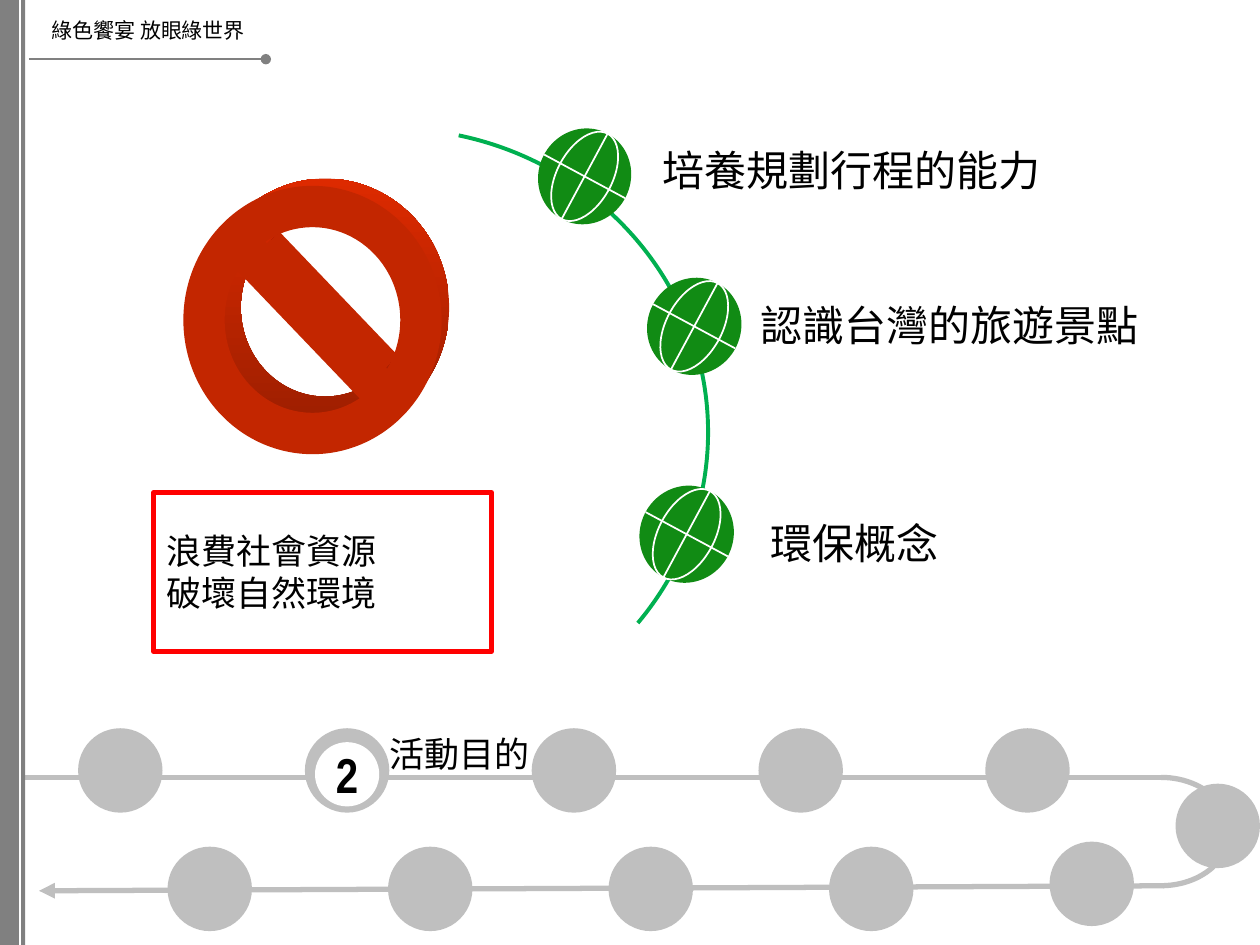
from math import cos, radians, sin

from lxml.etree import SubElement
from pptx import Presentation
from pptx.dml.color import RGBColor
from pptx.enum.shapes import MSO_CONNECTOR, MSO_SHAPE as SHAPE
from pptx.enum.text import MSO_ANCHOR as ANCHOR, PP_ALIGN as ALIGN
from pptx.oxml.ns import qn
from pptx.util import Inches, Pt

WIDTH, HEIGHT = 10, 7.5
CJK_FONT = "Noto Sans CJK SC"
COLORS = {
    "black": "000000", "white": "FFFFFF", "gray": "808080", "track": "BFBFBF",
    "globe": "118B14", "arc": "00B050", "red": "FF0000",
    "sign": "C32600", "sign_dark": "9A1E00", "sign_bright": "DD2A00",
}

HEADER = "綠色饗宴 放眼綠世界"
WARNINGS = ["浪費社會資源", "破壞自然環境"]
STEP_NUMBER, STEP_TITLE = "2", "活動目的"
# text, globe center, globe size, label box
GOALS = [
    ("培養規劃行程的能力", (4.64, 1.4), (0.73, 0.77), (5.16, 1.1, 3.62, 0.5)),
    ("環保概念", (5.45, 4.24), (0.74, 0.78), (6.02, 4.06, 2.92, 0.5)),
    ("認識台灣的旅遊景點", (5.51, 2.59), (0.74, 0.78), (5.94, 2.33, 3.39, 0.5)),
]
GLOBE_TILT = 28.3

# Stops of the winding track at the foot of the slide
STOP_SIZE = 0.67
STOPS_PER_ROW = 5
UPPER_LEFT, UPPER_STEP, UPPER_TOP = 0.62, 1.8, 5.78
LOWER_LEFT, LOWER_STEP, LOWER_TOP = 1.33, 1.75, 6.72
LAST_LOWER_TOP = 6.68
TURN_STOP = (WIDTH - STOP_SIZE, 6.22)

SIGN_CENTER, SIGN_SIZE, SIGN_RING = (2.48, 2.54), (2.05, 2.13), 0.16
SIGN_SHIFT, SIGN_BACK_SCALE = 0.1, 0.96


def color(name):
    return RGBColor.from_string(COLORS[name])


def around(center, size):
    return (center[0] - size[0] / 2, center[1] - size[1] / 2, *size)


def add_shape(shapes, kind, box, fill=None, line=None, weight=1, rotation=0, adjust=()):
    shape = shapes.add_shape(kind, *(Inches(length) for length in box))
    shape.shadow.inherit = False
    shape.rotation = rotation
    for index, value in enumerate(adjust):
        shape.adjustments[index] = value
    if fill:
        shape.fill.solid()
        shape.fill.fore_color.rgb = color(fill)
    else:
        shape.fill.background()
    if line:
        shape.line.color.rgb = color(line)
        shape.line.width = Pt(weight)
    else:
        shape.line.fill.background()
    return shape


def add_line(shapes, start, end, line, weight=1, head=None, tail=None):
    connector = shapes.add_connector(
        MSO_CONNECTOR.STRAIGHT, *(Inches(length) for length in (*start, *end)))
    connector.line.color.rgb = color(line)
    connector.line.width = Pt(weight)
    properties = connector.element.spPr
    outline = properties.find(qn("a:ln"))
    for tag, kind in (("a:headEnd", head), ("a:tailEnd", tail)):
        if kind:
            SubElement(outline, qn(tag), type=kind)
    SubElement(properties, qn("a:effectLst"))


def write(shape, *lines, size, font="Arial", bold=False, align=ALIGN.LEFT,
          anchor=ANCHOR.MIDDLE, wrap=True):
    frame = shape.text_frame
    frame.word_wrap = wrap
    frame.vertical_anchor = anchor
    for index, text in enumerate(lines):
        paragraph = frame.add_paragraph() if index else frame.paragraphs[0]
        paragraph.alignment = align
        run = paragraph.add_run()
        run.text = text
        run.font.name, run.font.size, run.font.bold = font, Pt(size), bold
        run.font.color.rgb = color("black")
        if font == CJK_FONT:
            SubElement(run.font._element, qn("a:ea"), typeface=font)


def add_text_box(shapes, box, text, **text_format):
    text_box = shapes.add_textbox(*(Inches(length) for length in box))
    write(text_box, text, **text_format)


def add_frame(shapes):
    """Side bar and header with its underline."""
    add_shape(shapes, SHAPE.RECTANGLE, (0, 0, 0.2, HEIGHT), fill="gray")
    add_line(shapes, (0.16, HEIGHT), (0.16, 0), "white")
    add_line(shapes, (0.23, 0.47), (2.11, 0.47), "gray", tail="oval")
    add_text_box(shapes, (0.31, 0.09, 1.95, 0.3), HEADER, size=12, anchor=ANCHOR.TOP)


def add_track(shapes):
    add_line(shapes, (0.31, 7.07), (9.24, 7.03), "track", 3, head="triangle")
    # Arc adjustments are degrees times 0.6
    add_shape(shapes, SHAPE.ARC, (8.67, 6.17, 1.09, 0.86), line="track", weight=3,
              adjust=(270 * 0.6, 87.58 * 0.6))
    upper = [(UPPER_LEFT + UPPER_STEP * i, UPPER_TOP) for i in range(STOPS_PER_ROW)]
    lower = [(LOWER_LEFT + LOWER_STEP * i, LOWER_TOP) for i in range(STOPS_PER_ROW - 1)]
    last = (LOWER_LEFT + LOWER_STEP * (STOPS_PER_ROW - 1), LAST_LOWER_TOP)
    for left, top in [*lower, last, TURN_STOP, *upper]:
        add_shape(shapes, SHAPE.OVAL, (left, top, STOP_SIZE, STOP_SIZE), fill="track")


def add_goal(shapes, text, center, size, label_box):
    """Tilted globe with its label, as one group."""
    group = shapes.add_group_shape().shapes
    width, height = size
    add_shape(group, SHAPE.OVAL, around(center, size), fill="globe", rotation=GLOBE_TILT)
    add_shape(group, SHAPE.OVAL, around(center, (width * 0.6, height)), fill="globe",
              line="white", rotation=GLOBE_TILT)
    for length, angle in ((width, GLOBE_TILT), (height, GLOBE_TILT - 90)):
        dx = length / 2 * cos(radians(angle))
        dy = length / 2 * sin(radians(angle))
        add_line(group, (center[0] - dx, center[1] - dy),
                 (center[0] + dx, center[1] + dy), "white")
    label = add_shape(group, SHAPE.RECTANGLE, label_box, fill="white")
    write(label, text, size=24, font=CJK_FONT)


def add_sign(shapes):
    """Prohibition sign whose smaller back face gives it depth."""
    back_center = (SIGN_CENTER[0] + SIGN_SHIFT, SIGN_CENTER[1] - SIGN_SHIFT)
    back = around(back_center, [side * SIGN_BACK_SCALE for side in SIGN_SIZE])
    front = around(SIGN_CENTER, SIGN_SIZE)
    faces = [add_shape(shapes, kind, box, fill="sign", adjust=(SIGN_RING,))
             for kind, box in ((SHAPE.NO_SYMBOL, back), (SHAPE.DONUT, back),
                               (SHAPE.NO_SYMBOL, front))]
    shade = faces[1].fill
    shade.gradient()
    shade.gradient_angle = 90
    for stop, name in zip(shade.gradient_stops, ("sign_dark", "sign_bright")):
        stop.color.rgb = color(name)


def main():
    presentation = Presentation()
    presentation.slide_width, presentation.slide_height = Inches(WIDTH), Inches(HEIGHT)
    slide = presentation.slides.add_slide(presentation.slide_layouts[6])
    shapes = slide.shapes

    add_line(shapes, (0, 6.17), (9.22, 6.17), "track", 3)
    add_frame(shapes)
    add_track(shapes)
    add_shape(shapes, SHAPE.ARC, around((3.11, 3.43), (5.02, 4.82)), line="arc",
              weight=2.25, adjust=(282.7 * 0.6, 37.8 * 0.6))
    for goal in GOALS:
        add_goal(shapes, *goal)
    add_sign(shapes)
    warning_box = add_shape(shapes, SHAPE.FLOWCHART_PROCESS, (1.22, 3.91, 2.68, 1.26),
                            line="red", weight=3)
    write(warning_box, *WARNINGS, size=20)
    add_text_box(shapes, (2.73, 5.7, 1.84, 0.56), STEP_TITLE, size=20, font=CJK_FONT,
                 align=ALIGN.CENTER)
    badge = add_shape(shapes, SHAPE.OVAL, (2.5, 5.89, 0.51, 0.51), fill="white")
    write(badge, STEP_NUMBER, size=28, font="Arial Narrow", bold=True,
          align=ALIGN.CENTER, wrap=False)
    presentation.save("out.pptx")


if __name__ == "__main__":
    main()
